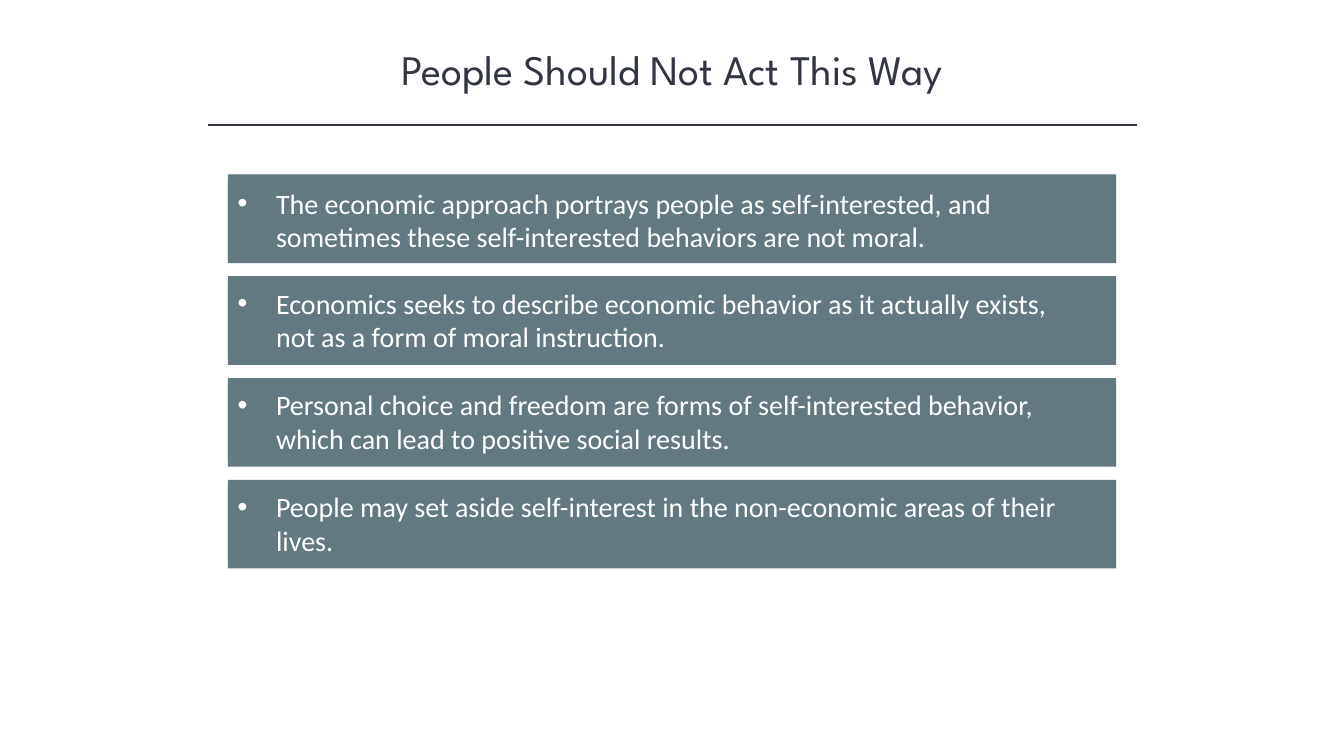
from lxml import etree
from pptx import Presentation
from pptx import util as u
from pptx.dml.color import RGBColor
from pptx.enum import shapes, text
from pptx.oxml import ns

PX = 9144
INK, SLATE, WHITE = "323542", "627981", "FFFFFF"
POINTS = [
    (7, "The economic approach portrays people as self-interested, and "
        "sometimes these self-interested behaviors are not moral."),
    (5, "Economics seeks to describe economic behavior as it actually exists, "
        "not as a form of moral instruction."),
    (5, "Personal choice and freedom are forms of self-interested behavior, "
        "which can lead to positive social results."),
    (5, "People may set aside self-interest in the non-economic areas of their lives."),
]


def px(*sizes):
    """Turn pixel lengths into EMU."""
    return [size * PX for size in sizes]


def tint(code):
    """Make a colour from a hex string."""
    return RGBColor.from_string(code)


def style(para, face, size, code):
    """Set the font of a whole paragraph."""
    para.font.name = face
    para.font.size = u.Pt(size)
    para.font.color.rgb = tint(code)


def title(slide, words):
    """Add the centred heading."""
    frame = slide.shapes.add_textbox(*px(167, 37, 1000, 61)).text_frame
    frame.word_wrap = True
    frame.vertical_anchor = text.MSO_ANCHOR.BOTTOM
    para = frame.paragraphs[0]
    para.text = words
    para.alignment = text.PP_ALIGN.CENTER
    style(para, "League Spartan", 30, INK)


def rule(slide, left, right, top):
    """Add a thin horizontal line."""
    line = slide.shapes.add_connector(
        shapes.MSO_CONNECTOR.STRAIGHT, *px(left, top, right, top))
    line.line.color.rgb = tint(INK)
    line.line.width = u.Pt(1)
    etree.SubElement(line.element.spPr, ns.qn("a:effectLst"))


def bullet(para, indent):
    """Give a paragraph a round bullet with a hanging indent."""
    props = para._p.get_or_add_pPr()
    props.set("marL", str(indent * PX))
    props.set("indent", str(-indent * PX))
    etree.SubElement(props, ns.qn("a:buFont")).set("typeface", "Arial")
    etree.SubElement(props, ns.qn("a:buChar")).set("char", "•")


def block(group, top, width, height):
    """Add a slate rectangle to a group."""
    rect = group.shapes.add_shape(
        shapes.MSO_SHAPE.RECTANGLE, *px(226, top, width, height))
    rect.shadow.inherit = False
    rect.fill.solid()
    rect.fill.fore_color.rgb = tint(SLATE)
    rect.line.fill.background()
    return rect


def point(slide, top, drop, words):
    """Add a bar with one bulleted statement on it."""
    group = slide.shapes.add_group_shape()
    block(group, top, 881, 88)
    frame = block(group, top + drop, 854, 77).text_frame
    frame.word_wrap = True
    frame.vertical_anchor = text.MSO_ANCHOR.TOP
    para = frame.paragraphs[0]
    para.text = words
    para.alignment = text.PP_ALIGN.LEFT
    bullet(para, 38)
    style(para, "Calibri", 20, WHITE)


def main():
    """Build and save the slide."""
    deck = Presentation()
    deck.slide_width, deck.slide_height = u.Inches(13.33), u.Inches(7.5)
    slide = deck.slides.add_slide(deck.slide_layouts[6])
    title(slide, "People Should Not Act This Way")
    rule(slide, 206, 1128, 124)
    for row, (drop, words) in enumerate(POINTS):
        point(slide, 173 + 101 * row, drop, words)
    deck.save("out.pptx")


if __name__ == "__main__":
    main()
